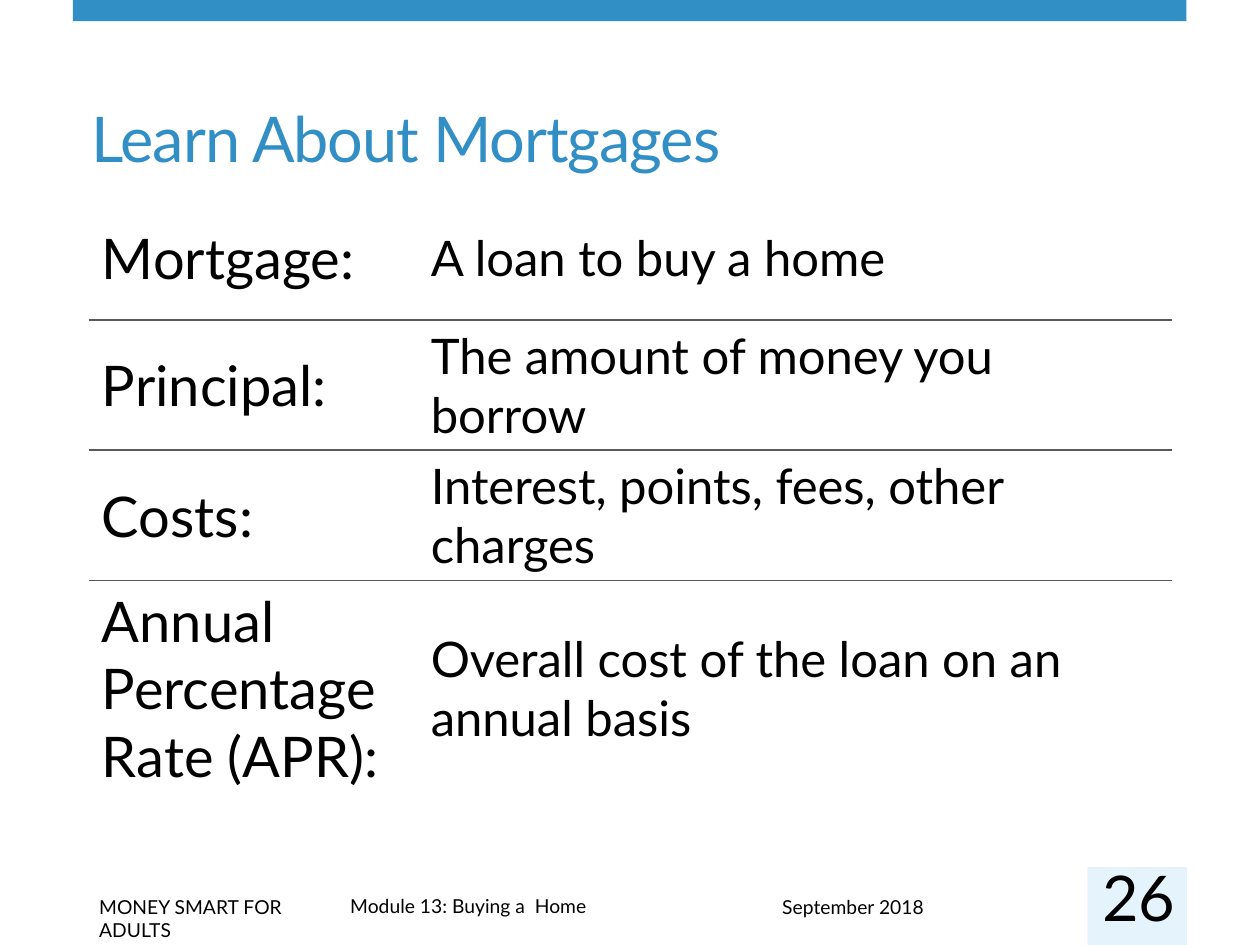
from lxml.etree import SubElement
from pptx import Presentation
from pptx.dml.color import RGBColor
from pptx.enum.shapes import MSO_SHAPE as Shape
from pptx.enum.text import MSO_ANCHOR as Anchor, PP_ALIGN as Align
from pptx.oxml.ns import qn
from pptx.util import Cm, Pt

BLUE = RGBColor(0x31, 0x8F, 0xC5)
PALE_BLUE = RGBColor(0xE4, 0xF3, 0xFC)
BLACK = RGBColor(0, 0, 0)
WHITE = RGBColor(0xFF, 0xFF, 0xFF)
GRAY = RGBColor(0x59, 0x59, 0x59)
FONT = "Lato"

TERMS = [
    ("Mortgage:", "A loan to buy a home"),
    ("Principal:", "The amount of money you borrow"),
    ("Costs:", "Interest, points, fees, other charges"),
    ("Annual Percentage Rate (APR):", "Overall cost of the loan on an annual basis"),
]
COLUMN_WIDTHS = (6.63, 15.19)
COLUMN_SIZES = (32, 28)
ROW_HEIGHTS = (2.51, 2.51, 2.51, 3.61)

# Text, left, top, width
FOOTERS = [
    ("MONEY SMART FOR ADULTS", 1.75, 17.93, 5.31),
    ("Module 13: Buying a  Home", 6.81, 17.91, 14.38),
    ("September 2018", 15.52, 17.93, 6.4),
]


def write(frame, text, size=11, color=BLACK, align=Align.LEFT, spacing=None):
    paragraph = frame.paragraphs[0]
    paragraph.alignment = align
    run = paragraph.add_run()
    run.text = text
    run.font.name = FONT
    run.font.size = Pt(size)
    run.font.color.rgb = color
    if spacing is not None:
        run.font._element.set("spc", str(round(spacing * 100)))


def add_block(slide, left, top, width, height, color):
    block = slide.shapes.add_shape(
        Shape.RECTANGLE, Cm(left), Cm(top), Cm(width), Cm(height))
    block.shadow.inherit = False
    block.fill.solid()
    block.fill.fore_color.rgb = color
    block.line.fill.background()


def add_text(slide, text, left, top, width, height,
             anchor=Anchor.TOP, inset=None, **text_format):
    frame = slide.shapes.add_textbox(
        Cm(left), Cm(top), Cm(width), Cm(height)).text_frame
    frame.word_wrap = True
    frame.vertical_anchor = anchor
    if inset is not None:
        frame.margin_left = frame.margin_right = Cm(inset)
        frame.margin_top = frame.margin_bottom = Cm(inset)
    write(frame, text, **text_format)


def set_borders(cell, **colors):
    properties = cell._tc.get_or_add_tcPr()
    for position, side in enumerate("LRTB"):
        line = SubElement(properties, qn(f"a:ln{side}"), w=str(Pt(1)))
        fill = SubElement(line, qn("a:solidFill"))
        SubElement(fill, qn("a:srgbClr"), val=str(colors.get(side, WHITE)))
        properties.remove(line)
        properties.insert(position, line)


def add_terms_table(slide, left, top):
    table = slide.shapes.add_table(
        len(TERMS), len(COLUMN_WIDTHS), Cm(left), Cm(top),
        Cm(sum(COLUMN_WIDTHS)), Cm(sum(ROW_HEIGHTS))).table
    table.first_row = table.horz_banding = False
    for column, width in zip(table.columns, COLUMN_WIDTHS):
        column.width = Cm(width)
    last = len(TERMS) - 1
    for r, (entry, height) in enumerate(zip(TERMS, ROW_HEIGHTS)):
        table.rows[r].height = Cm(height)
        for c, (text, size) in enumerate(zip(entry, COLUMN_SIZES)):
            cell = table.cell(r, c)
            cell.fill.background()
            cell.vertical_anchor = Anchor.MIDDLE
            write(cell.text_frame, text, size=size)
            # Only the lines between rows are visible
            set_borders(cell, T=GRAY if r > 0 else WHITE,
                        B=GRAY if r < last else WHITE)


def main():
    deck = Presentation()
    deck.slide_width, deck.slide_height = Cm(25.4), Cm(19.05)
    slide = deck.slides.add_slide(deck.slide_layouts[6])

    # Top bar and page number background
    add_block(slide, 1.47, 0, 22.45, 0.43, BLUE)
    add_block(slide, 21.92, 17.48, 2.01, 1.57, PALE_BLUE)

    # Footer
    for text, left, top, width in FOOTERS:
        add_text(slide, text, left, top, width, 0.74)
    add_text(slide, "26", 21.97, 17.68, 1.98, 0.79, anchor=Anchor.MIDDLE,
             inset=0, size=36, align=Align.CENTER)

    # Title and definitions
    add_text(slide, "Learn About Mortgages", 1.6, 1.22, 20.83, 2.44,
             anchor=Anchor.BOTTOM, size=36, color=BLUE, spacing=-0.6)
    add_terms_table(slide, 1.8, 3.94)

    deck.save("out.pptx")


if __name__ == "__main__":
    main()
